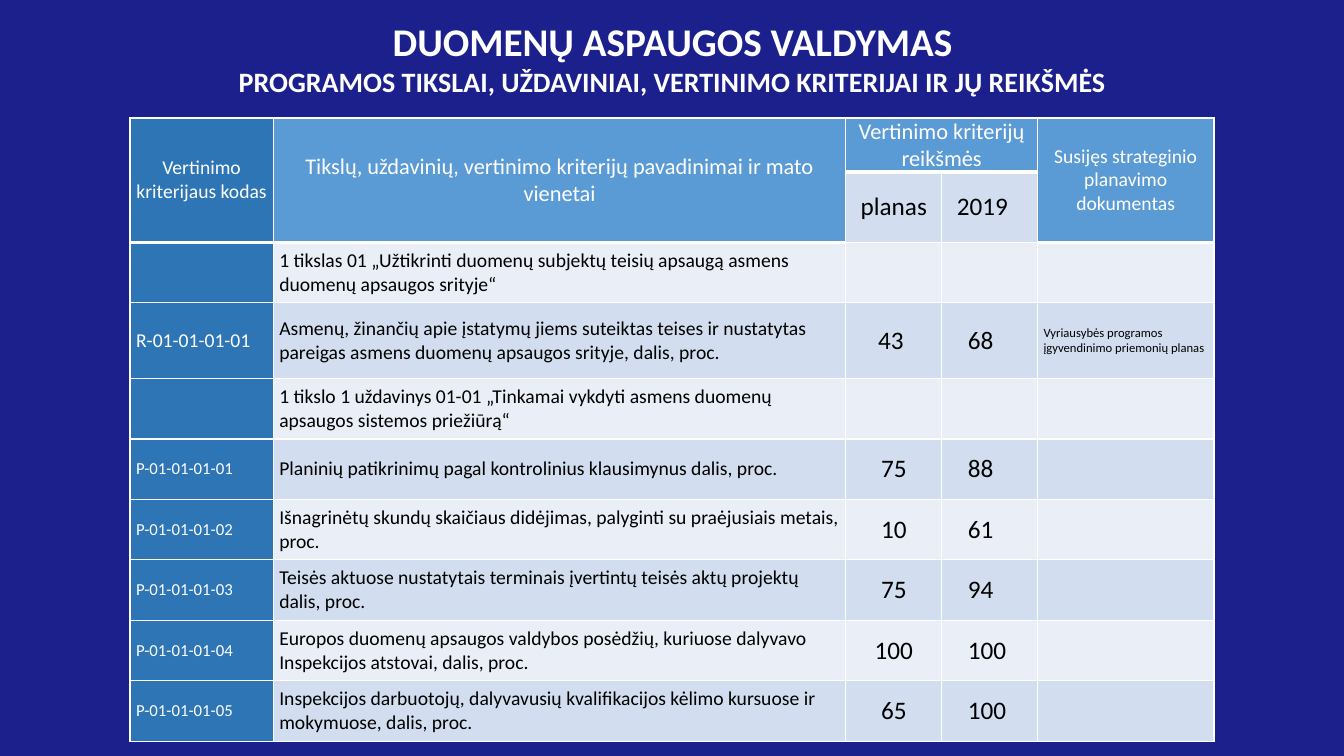
from dataclasses import dataclass

from lxml.etree import SubElement
from pptx import Presentation
from pptx.dml.color import RGBColor
from pptx.enum.text import MSO_ANCHOR, MSO_AUTO_SIZE, PP_ALIGN
from pptx.oxml.ns import qn
from pptx.slide import Slide
from pptx.table import Table, _Cell as Cell
from pptx.util import Inches, Pt

FONT = "Calibri"
NAVY = RGBColor(0x1B, 0x20, 0x8D)
WHITE = RGBColor(0xFF, 0xFF, 0xFF)
BLACK = RGBColor(0, 0, 0)
CODE_BLUE = RGBColor(0x2E, 0x75, 0xB6)
HEADER_BLUE = RGBColor(0x5B, 0x9B, 0xD5)
BAND_DARK = RGBColor(0xD2, 0xDE, 0xEF)
BAND_LIGHT = RGBColor(0xEA, 0xEF, 0xF7)

COLUMN_WIDTHS = [1.42, 5.68, 0.95, 0.95, 1.75]
HEADER_HEIGHTS = [0.26, 0.62]
ROW_HEIGHT = 0.6
TABLE_LEFT, TABLE_TOP, TABLE_HEIGHT = 1.29, 1.17, 6.12
YEAR_INDENT = 0.2


@dataclass(frozen=True)
class Header:
    text: str
    row: int
    column: int
    row_span: int
    column_span: int
    size: int
    fill: RGBColor = HEADER_BLUE
    color: RGBColor = WHITE
    indent: float | None = None


@dataclass(frozen=True)
class Criterion:
    name: str
    code: str = ""
    plan: str = ""
    result: str = ""
    document: str = ""
    code_size: int = 12
    height: float = ROW_HEIGHT


HEADERS = [
    Header("Vertinimo kriterijaus kodas", 0, 0, 2, 1, 14, CODE_BLUE),
    Header("Tikslų, uždavinių, vertinimo kriterijų pavadinimai ir mato vienetai", 0, 1, 2, 1, 16),
    Header("Vertinimo kriterijų reikšmės", 0, 2, 1, 2, 16),
    Header("Susijęs strateginio planavimo dokumentas", 0, 4, 2, 1, 14),
    Header("planas", 1, 2, 1, 1, 18, BAND_DARK, BLACK),
    Header("2019", 1, 3, 1, 1, 18, BAND_DARK, BLACK, indent=0.09),
]

CRITERIA = [
    Criterion("1 tikslas 01 „Užtikrinti duomenų subjektų teisių apsaugą asmens duomenų apsaugos srityje“"),
    Criterion(
        "Asmenų, žinančių apie įstatymų jiems suteiktas teises ir nustatytas pareigas "
        "asmens duomenų apsaugos srityje, dalis, proc.",
        "R-01-01-01-01", "43 ", "68",
        "Vyriausybės programos įgyvendinimo priemonių planas", code_size=14, height=0.75,
    ),
    Criterion("1 tikslo 1 uždavinys 01-01 „Tinkamai vykdyti asmens duomenų apsaugos sistemos priežiūrą“"),
    Criterion("Planinių patikrinimų pagal kontrolinius klausimynus dalis, proc.",
              "P-01-01-01-01", "75", "88"),
    Criterion("Išnagrinėtų skundų skaičiaus didėjimas, palyginti su praėjusiais metais, proc.",
              "P-01-01-01-02", "10", "61"),
    Criterion("Teisės aktuose nustatytais terminais įvertintų teisės aktų projektų dalis, proc.",
              "P-01-01-01-03", "75", "94"),
    Criterion("Europos duomenų apsaugos valdybos posėdžių, kuriuose dalyvavo Inspekcijos atstovai, dalis, proc.",
              "P-01-01-01-04", "100", "100"),
    Criterion("Inspekcijos darbuotojų, dalyvavusių kvalifikacijos kėlimo kursuose ir mokymuose, dalis, proc.",
              "P-01-01-01-05", "65", "100"),
]


def add_borders(cell: Cell, bottom_width: float = 1) -> None:
    """Draw white lines on all sides, before the fill as the schema asks."""
    properties = cell._tc.get_or_add_tcPr()
    widths = {"a:lnL": 1, "a:lnR": 1, "a:lnT": 1, "a:lnB": bottom_width}
    for tag, width in widths.items():
        line = SubElement(properties, qn(tag), w=str(Pt(width)))
        fill = SubElement(line, qn("a:solidFill"))
        SubElement(fill, qn("a:srgbClr"), val=str(WHITE))


def style_cell(cell: Cell, fill: RGBColor, bottom_width: float = 1) -> None:
    add_borders(cell, bottom_width)
    cell.fill.solid()
    cell.fill.fore_color.rgb = fill
    cell.vertical_anchor = MSO_ANCHOR.MIDDLE
    cell.margin_left = cell.margin_right = Inches(0.06)
    cell.margin_top = cell.margin_bottom = 0


def write_cell(cell: Cell, text: str, size: int, color: RGBColor,
               align: PP_ALIGN = PP_ALIGN.LEFT, indent: float | None = None) -> None:
    if not text:
        return
    cell.text = text
    paragraph = cell.text_frame.paragraphs[0]
    paragraph.alignment = align
    if indent is not None:
        properties = paragraph._p.get_or_add_pPr()
        properties.set("marL", "0")
        properties.set("indent", str(Inches(indent)))
    paragraph.font.name = FONT
    paragraph.font.size = Pt(size)
    paragraph.font.color.rgb = color


def fill_headers(table: Table) -> None:
    for header in HEADERS:
        cell = table.cell(header.row, header.column)
        last_row = header.row + header.row_span - 1
        last_column = header.column + header.column_span - 1
        merged = (last_row, last_column) != (header.row, header.column)
        if merged:
            cell.merge(table.cell(last_row, last_column))
        style_cell(cell, header.fill, 3 if merged else 1)
        align = PP_ALIGN.CENTER if header.indent is None else PP_ALIGN.LEFT
        write_cell(cell, header.text, header.size, header.color, align, header.indent)


def fill_criteria(table: Table) -> None:
    for index, criterion in enumerate(CRITERIA):
        cells = table.rows[len(HEADER_HEIGHTS) + index].cells
        band = BAND_DARK if index % 2 else BAND_LIGHT
        for column, cell in enumerate(cells):
            style_cell(cell, band if column else CODE_BLUE)
        code, name, plan, result, document = cells
        write_cell(code, criterion.code, criterion.code_size, WHITE)
        write_cell(name, criterion.name, 14, BLACK)
        write_cell(plan, criterion.plan, 18, BLACK, PP_ALIGN.CENTER)
        write_cell(result, criterion.result, 18, BLACK, indent=YEAR_INDENT)
        write_cell(document, criterion.document, 9, BLACK)


def add_criteria_table(slide: Slide) -> None:
    heights = HEADER_HEIGHTS + [criterion.height for criterion in CRITERIA]
    frame = slide.shapes.add_table(
        len(heights), len(COLUMN_WIDTHS), Inches(TABLE_LEFT), Inches(TABLE_TOP),
        Inches(sum(COLUMN_WIDTHS)), Inches(TABLE_HEIGHT))
    table = frame.table
    table.first_row = table.horz_banding = False
    for column, width in zip(table.columns, COLUMN_WIDTHS):
        column.width = Inches(width)
    for row, height in zip(table.rows, heights):
        row.height = Inches(height)
    frame.height = Inches(TABLE_HEIGHT)
    fill_headers(table)
    fill_criteria(table)


def add_title(slide: Slide) -> None:
    box = slide.shapes.add_textbox(Inches(2.14), Inches(0.12), Inches(9.06), Inches(0.91))
    text_frame = box.text_frame
    text_frame.word_wrap = True
    text_frame.auto_size = MSO_AUTO_SIZE.SHAPE_TO_FIT_TEXT
    text_frame.text = ("DUOMENŲ ASPAUGOS VALDYMAS\n"
                       "PROGRAMOS TIKSLAI, UŽDAVINIAI, VERTINIMO KRITERIJAI IR JŲ REIKŠMĖS")
    for paragraph, size in zip(text_frame.paragraphs, (28, 20)):
        paragraph.alignment = PP_ALIGN.CENTER
        paragraph.font.name = FONT
        paragraph.font.size = Pt(size)
        paragraph.font.bold = True
        paragraph.font.color.rgb = WHITE


def main() -> None:
    presentation = Presentation()
    presentation.slide_width = Inches(13.33)
    presentation.slide_height = Inches(7.5)
    slide = presentation.slides.add_slide(presentation.slide_layouts[6])
    slide.background.fill.solid()
    slide.background.fill.fore_color.rgb = NAVY
    add_title(slide)
    add_criteria_table(slide)
    presentation.save("out.pptx")


if __name__ == "__main__":
    main()
